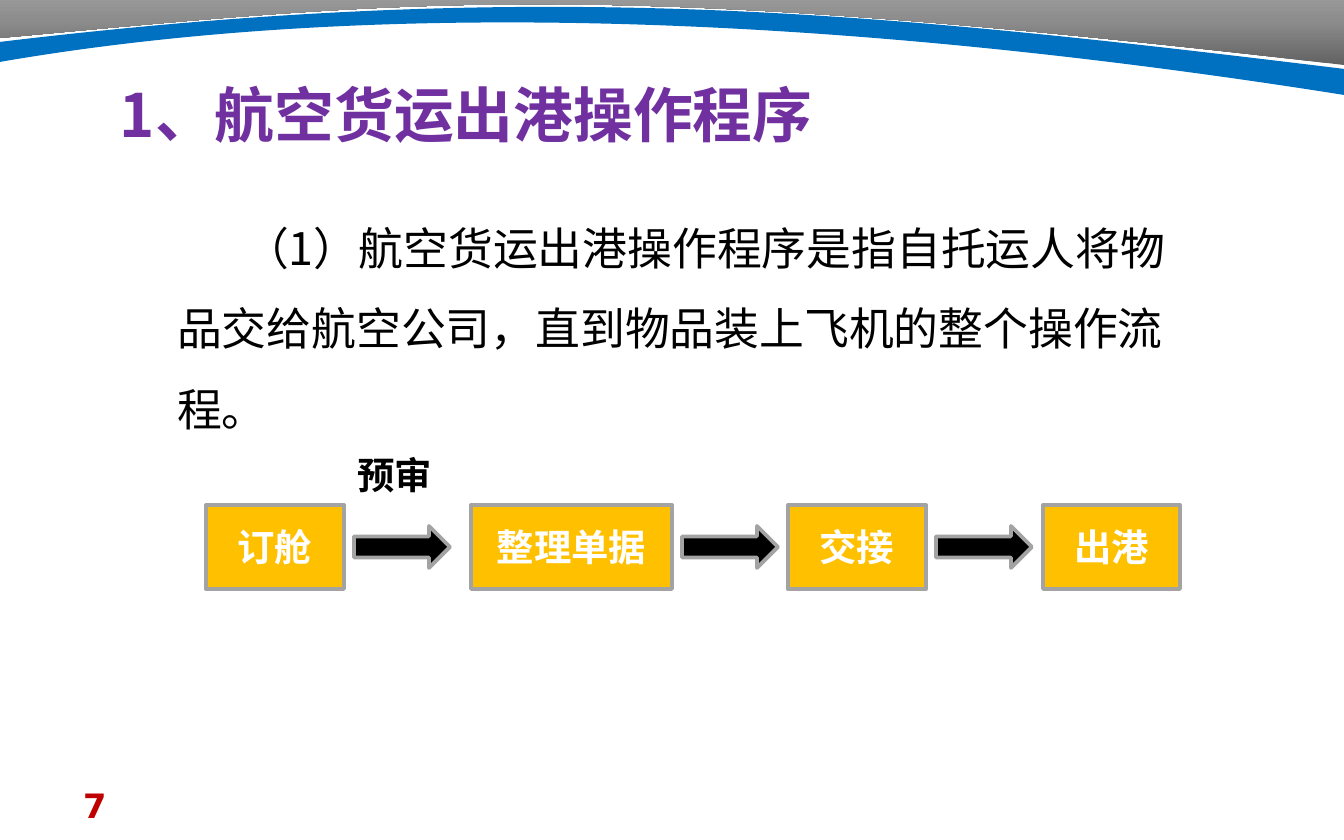
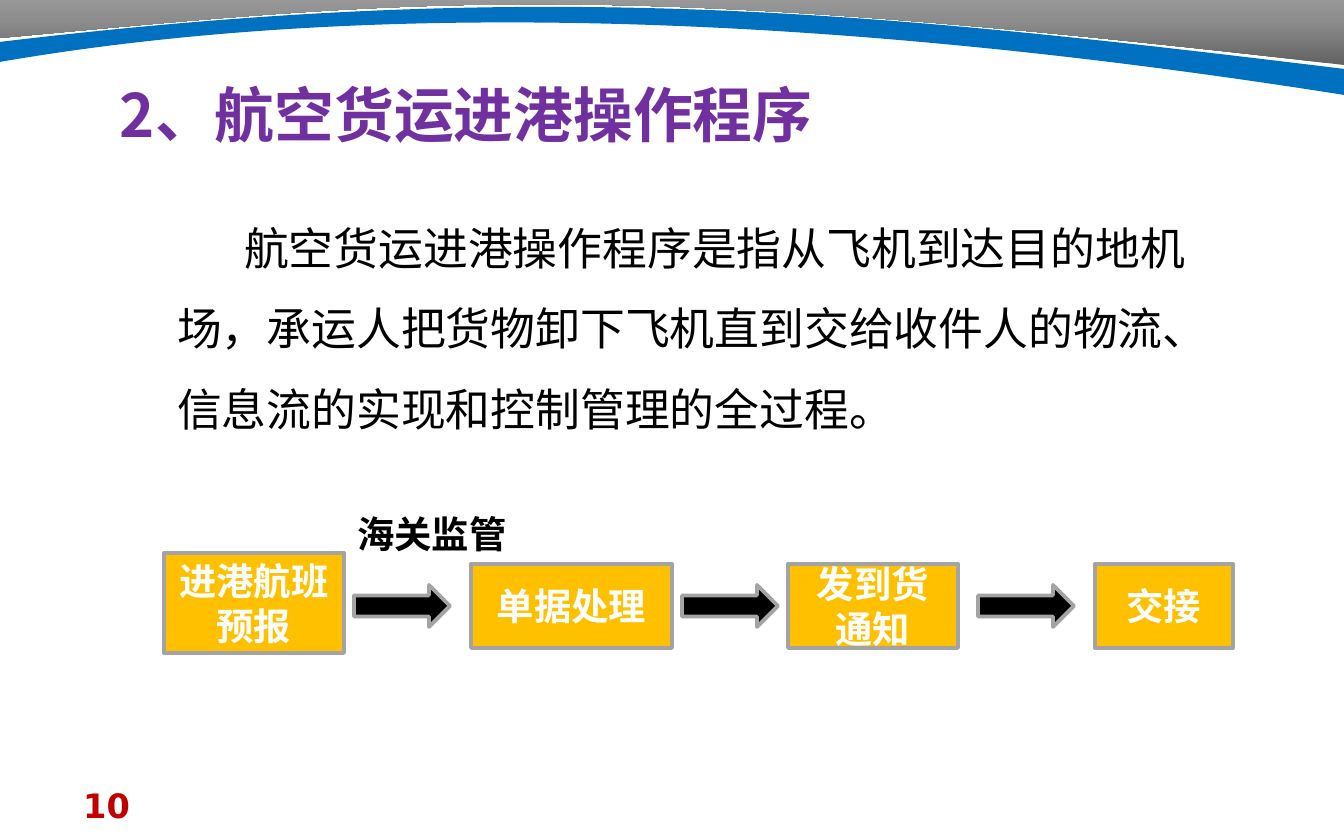
"""Build two slides on the outbound and inbound air cargo procedures."""
from copy import deepcopy

from lxml import etree
from pptx import Presentation
from pptx import util as u
from pptx.dml.color import RGBColor
from pptx.enum import shapes, text
from pptx.oxml.ns import qn

EMU_PER_PX = 914400 / 134.4
WIDTH, HEIGHT = 1344, 840
CJK, LATIN = "Noto Sans CJK SC", "DejaVu Sans"
PURPLE, RED, BLACK, WHITE = "7030A0", "C00000", "000000", "FFFFFF"
BLUE, AMBER, OUTLINE = "0070C0", "FFC000", "A3A3A3"
GREYS = ("626262", "8C8C8C", "A6A6A6")

GREY_BAND = [
    ((WIDTH, 65),),
    ((595, -23), (414, 0), (0, 38)),
    ((0, 26),),
    ((0, -3),),
    ((WIDTH, -3),),
]
BLUE_BAND = [
    ((0, 42),),
    ((542, -23), (876, 12), (WIDTH, 69)),
    ((WIDTH, 95),),
    ((813, 11), (359, 0), (0, 62)),
]

BOX_HEIGHT = 84
ARROW_WIDTH, ARROW_HEIGHT = 96, 42
LABEL_RISE, LABEL_HEIGHT = 59, 59

SLIDES = [
    {
        "number": "7",
        "title": " 1、航空货运出港操作程序",
        "body": "（1）航空货运出港操作程序是指自托运人将物品交给航空公司，直到物品装上飞机的整个操作流程。",
        "body_height": 245,
        "label": ("预审", 126),
        "row_top": 505,
        "steps": [
            ("订舱", 206, 505, 138, BOX_HEIGHT),
            ("整理单据", 471, 505, 201, BOX_HEIGHT),
            ("交接", 788, 505, 138, BOX_HEIGHT),
            ("出港", 1043, 505, 137, BOX_HEIGHT),
        ],
        "arrow_gaps": (10, 10, 10),
    },
    {
        "number": "10",
        "title": " 2、航空货运进港操作程序",
        "body": "航空货运进港操作程序是指从飞机到达目的地机场，承运人把货物卸下飞机直到交给收件人的物流、信息流的实现和控制管理的全过程。",
        "body_height": 339,
        "label": ("海关监管", 191),
        "row_top": 564,
        "steps": [
            ("进港航班预报", 164, 553, 180, 100),
            ("单据处理", 471, 564, 201, BOX_HEIGHT),
            ("发到货通知", 788, 564, 170, BOX_HEIGHT),
            ("交接", 1095, 564, 138, BOX_HEIGHT),
        ],
        "arrow_gaps": (10, 10, 20),
    },
]


def px(length):
    return u.Emu(round(length * EMU_PER_PX))


def rgb(value):
    return RGBColor.from_string(value)


def write(shape, content, size, color, bold=True, font=CJK):
    shape.text_frame.word_wrap = True
    paragraph = shape.text_frame.paragraphs[0]
    paragraph.text = content
    paragraph.font.size = u.Pt(size)
    paragraph.font.bold = bold
    paragraph.font.color.rgb = rgb(color)
    paragraph.font.name = font
    latin = paragraph._p.pPr.find(".//" + qn("a:latin"))
    latin.addnext(etree.Element(qn("a:ea"), typeface=font))
    return paragraph


def add_text(slide, box, content, size, color, **style):
    shape = slide.shapes.add_textbox(*map(px, box))
    return write(shape, content, size, color, **style)


def add_band(slide, segments):
    points = [(px(x), px(y)) for segment in segments for x, y in segment]
    builder = slide.shapes.build_freeform(*points[0])
    builder.add_line_segments(points[1:], close=True)
    shape = builder.convert_to_shape()
    lines = iter(shape._element.spPr.findall(".//" + qn("a:lnTo")))
    for segment in segments[1:]:
        parts = [next(lines) for _ in segment]
        if len(parts) == 3:
            curve = etree.Element(qn("a:cubicBezTo"))
            parts[0].addprevious(curve)
            for part in parts:
                curve.append(part[0])
                part.getparent().remove(part)
    shape.shadow.inherit = False
    shape.line.fill.background()
    return shape


def add_header(slide):
    grey = add_band(slide, GREY_BAND)
    grey.fill.gradient()
    grey.fill.gradient_angle = 90
    properties = grey._element.spPr
    stop_list = properties.find(".//" + qn("a:gsLst"))
    stop_list.insert(1, deepcopy(stop_list[0]))
    for stop, position, color in zip(grey.fill.gradient_stops, (0, 0.5, 1), GREYS):
        stop.position = position
        stop.color.rgb = rgb(color)
    shadow = etree.SubElement(properties.find(qn("a:effectLst")), qn("a:outerShdw"),
                              dist=str(u.Pt(2)), dir="5400000")
    etree.SubElement(shadow, qn("a:srgbClr"), val=WHITE)
    blue = add_band(slide, BLUE_BAND)
    blue.fill.solid()
    blue.fill.fore_color.rgb = rgb(BLUE)


def add_block(slide, kind, box, fill):
    shape = slide.shapes.add_shape(kind, *map(px, box))
    shape.shadow.inherit = False
    shape.fill.solid()
    shape.fill.fore_color.rgb = rgb(fill)
    shape.line.color.rgb = rgb(OUTLINE)
    shape.line.width = u.Pt(2)
    return shape


def add_flow(slide, content):
    row_top, steps = content["row_top"], content["steps"]
    for name, *box in steps:
        shape = add_block(slide, shapes.MSO_SHAPE.RECTANGLE, box, AMBER)
        shape.text_frame.vertical_anchor = text.MSO_ANCHOR.MIDDLE
        write(shape, name, 20, WHITE).alignment = text.PP_ALIGN.CENTER
    arrow_top = row_top + (BOX_HEIGHT - ARROW_HEIGHT) / 2
    for (_, left, _, width, _), gap in zip(steps, content["arrow_gaps"]):
        box = (left + width + gap, arrow_top, ARROW_WIDTH, ARROW_HEIGHT)
        add_block(slide, shapes.MSO_SHAPE.RIGHT_ARROW, box, BLACK)
    label, label_width = content["label"]
    label_left = steps[0][1] + steps[0][3]
    add_text(slide, (label_left, row_top - LABEL_RISE, label_width, LABEL_HEIGHT),
             label, 20, BLACK)


def add_slide(presentation, content):
    slide = presentation.slides.add_slide(presentation.slide_layouts[6])
    add_text(slide, (70, 778, 313, 44), content["number"], 18, RED, font=LATIN)
    add_header(slide)
    add_text(slide, (93, 71, 781, 86), content["title"], 32, PURPLE)
    body = add_text(slide, (164, 187, 1048, content["body_height"]),
                    content["body"], 24, BLACK, bold=False)
    body.line_spacing = 1.5
    body._p.pPr.set("indent", str(px(67)))
    add_flow(slide, content)


def main():
    presentation = Presentation()
    presentation.slide_width = px(WIDTH)
    presentation.slide_height = px(HEIGHT)
    for content in SLIDES:
        add_slide(presentation, content)
    presentation.save("out.pptx")


if __name__ == "__main__":
    main()
